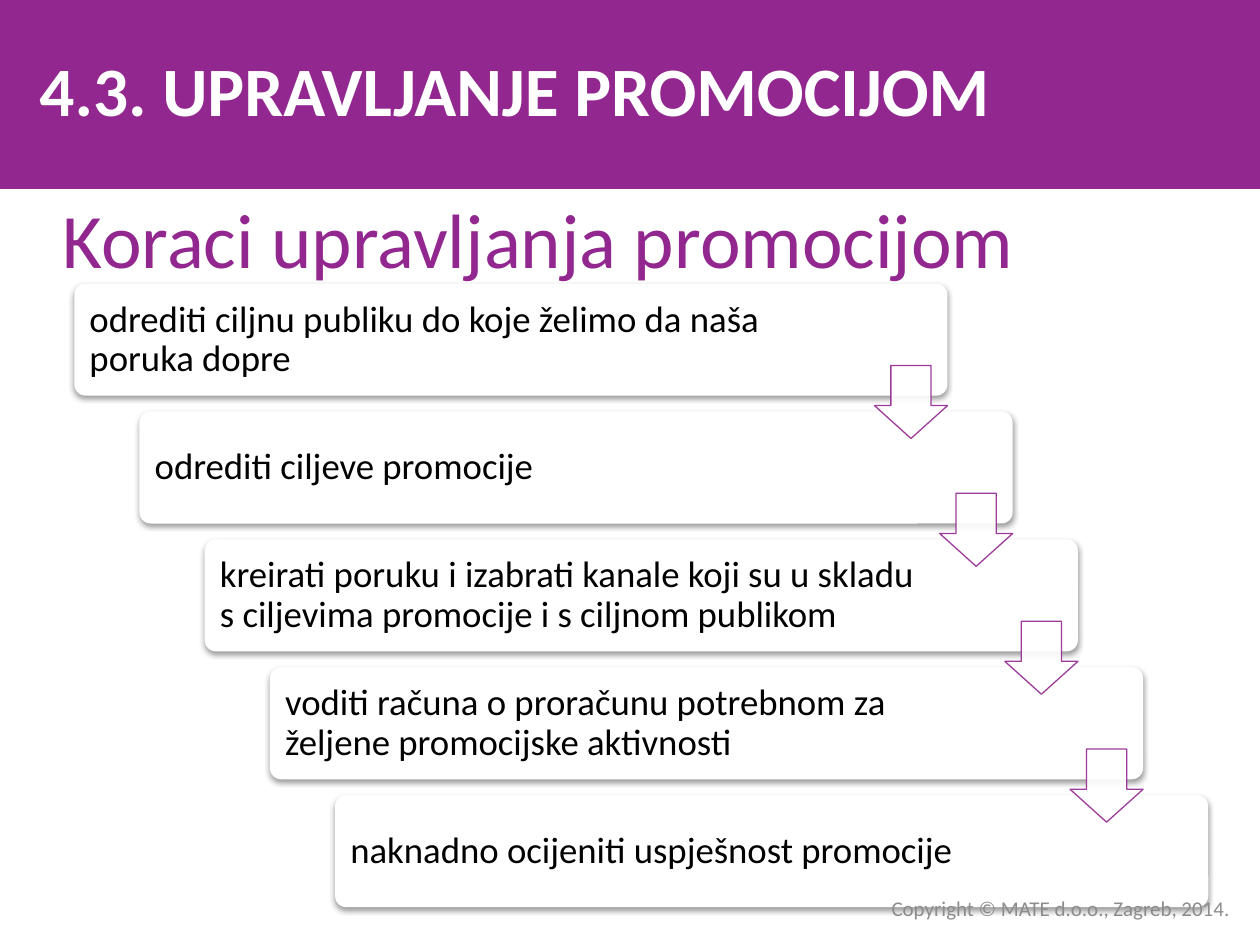
from dataclasses import dataclass

from lxml import etree
from pptx import Presentation
from pptx.dml.color import RGBColor
from pptx.enum.shapes import MSO_SHAPE
from pptx.enum.text import MSO_ANCHOR, MSO_AUTO_SIZE, PP_ALIGN
from pptx.oxml.ns import qn
from pptx.util import Inches, Pt

RECT = MSO_SHAPE.RECTANGLE
ROUNDED = MSO_SHAPE.ROUNDED_RECTANGLE
DOWN_ARROW = MSO_SHAPE.DOWN_ARROW
TOP = MSO_ANCHOR.TOP
MIDDLE = MSO_ANCHOR.MIDDLE
LEFT = PP_ALIGN.LEFT
CENTER = PP_ALIGN.CENTER
RIGHT = PP_ALIGN.RIGHT
NO_AUTOFIT = MSO_AUTO_SIZE.NONE
TITLE_ONLY = 5


@dataclass(frozen=True)
class Theme:
    font: str = "Calibri"
    purple: RGBColor = RGBColor(0x92, 0x27, 0x8F)
    white: RGBColor = RGBColor(0xFF, 0xFF, 0xFF)
    black: RGBColor = RGBColor(0, 0, 0)
    gray: RGBColor = RGBColor(0x8C, 0x8C, 0x8C)
    title_size: float = 39.6
    heading_size: float = 44
    step_size: float = 21
    footer_size: float = 12


class SlideBuilder:
    def __init__(self, slide, theme):
        self.slide = slide
        self.theme = theme

    def add_run(self, tf, text, size, color, align=LEFT, bold=False):
        p = tf.paragraphs[0]
        p.alignment = align
        r = p.add_run()
        r.text = text
        r.font.name = self.theme.font
        r.font.size = Pt(size)
        r.font.bold = bold
        r.font.color.rgb = color

    def shape(self, kind, x, y, w, h, fill):
        sp = self.slide.shapes.add_shape(kind, Inches(x), Inches(y), Inches(w), Inches(h))
        sp.shadow.inherit = False
        sp.fill.solid()
        sp.fill.fore_color.rgb = fill
        sp.line.fill.background()
        return sp

    def title(self, text):
        band = self.shape(RECT, 0, 0, 10, 1.5, self.theme.purple)
        title = self.slide.shapes.title
        title._element.addprevious(band._element)
        title.left, title.top = Inches(0), Inches(0.08)
        title.width, title.height = Inches(8.17), Inches(1.25)
        tf = title.text_frame
        tf.auto_size = NO_AUTOFIT
        tf.vertical_anchor = MIDDLE
        self.add_run(tf, text, self.theme.title_size, self.theme.white, CENTER, True)

    def text(self, text, x, y, w, h, size, color, align=LEFT, anchor=MIDDLE, wrap=True):
        box = self.slide.shapes.add_textbox(Inches(x), Inches(y), Inches(w), Inches(h))
        tf = box.text_frame
        tf.word_wrap = wrap
        tf.vertical_anchor = anchor
        self.add_run(tf, text, size, color, align)
        return tf

    def card(self, text, x, y):
        sp = self.shape(ROUNDED, x, y, 6.93, 0.89, self.theme.white)
        sp.adjustments[0] = 0.1
        effects = sp._element.spPr.find(qn("a:effectLst"))
        shadow = etree.SubElement(effects, qn("a:outerShdw"), blurRad=str(Pt(3.1)),
                                  dist=str(Pt(1.6)), dir="5400000", rotWithShape="0")
        color = etree.SubElement(shadow, qn("a:srgbClr"), val=str(self.theme.black))
        etree.SubElement(color, qn("a:alpha"), val="38000")
        tf = self.text(text, x + 0.03, y + 0.03, 5.78, 0.84,
                       self.theme.step_size, self.theme.black)
        tf.margin_left = tf.margin_right = Inches(0.09)
        tf.margin_top = tf.margin_bottom = Inches(0.09)
        tf.paragraphs[0].line_spacing = 0.9

    def arrow(self, x, y):
        sp = self.shape(DOWN_ARROW, x, y, 0.58, 0.58, self.theme.white)
        sp.adjustments[0] = 0.55
        sp.adjustments[1] = 0.45
        sp.line.color.rgb = self.theme.purple
        sp.line.width = Pt(0.75)
        for color in sp._element.spPr.iter(qn("a:srgbClr")):
            etree.SubElement(color, qn("a:alpha"), val="90000")


def main():
    prs = Presentation()
    prs.slide_width, prs.slide_height = Inches(10), Inches(7.5)
    theme = Theme()
    s = SlideBuilder(prs.slides.add_slide(prs.slide_layouts[TITLE_ONLY]), theme)
    s.title("4.3. UPRAVLJANJE PROMOCIJOM")

    steps = [
        "odrediti ciljnu publiku do koje želimo da naša poruka dopre",
        "odrediti ciljeve promocije",
        "kreirati poruku i izabrati kanale koji su u skladu s ciljevima promocije i s ciljnom publikom",
        "voditi računa o proračunu potrebnom za željene promocijske aktivnosti",
        "naknadno ocijeniti uspješnost promocije",
    ]
    gaps = len(steps) - 1
    dx, dy = (2.66 - 0.59) / gaps, (6.31 - 2.25) / gaps
    corners = [(0.59 + i * dx, 2.25 + i * dy) for i in range(len(steps))]
    for step, (x, y) in zip(steps, corners):
        s.card(step, x, y)
    for x, y in corners[:-1]:
        s.arrow(x + 6.35, y + 0.65)

    s.text("Koraci upravljanja promocijom", 0.36, 1.47, 7.83, 0.84,
           theme.heading_size, theme.purple, CENTER, TOP, False)
    s.text("Copyright © MATE d.o.o., Zagreb, 2014.", 4.69, 7.06, 5.17, 0.3,
           theme.footer_size, theme.gray, RIGHT)
    prs.save("out.pptx")


if __name__ == "__main__":
    main()
